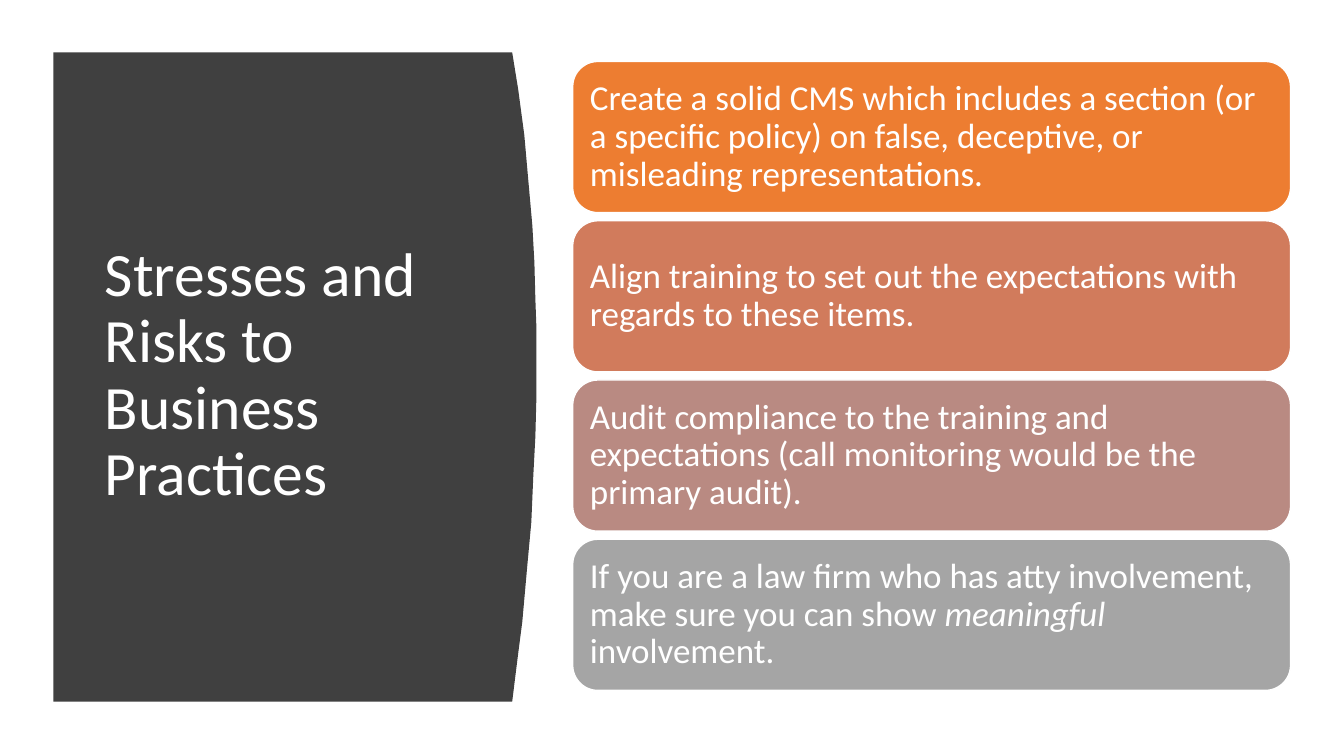
"""Build the slide on stresses and risks to business practices."""
import dataclasses

import pptx
import pptx.dml.color
import pptx.enum.shapes
import pptx.enum.text
import pptx.util

PX = 9144


@dataclasses.dataclass(frozen=True)
class Theme:
    """Colours, font and type sizes of the slide."""
    panel: str = "404040"
    white: str = "FFFFFF"
    cards: tuple = ("ED7D31", "D17B5C", "B98A82", "A5A5A5")
    font: str = "Calibri"
    title_size: int = 44
    card_size: int = 25


THEME = Theme()
TITLE = "Stresses and Risks to Business Practices"
CARDS = (
    (("Create a solid CMS which includes a section (or a specific policy) "
      "on false, deceptive, or misleading representations.", False),),
    (("Align training to set out the expectations with regards to these items.", False),),
    (("Audit compliance to the training and expectations "
      "(call monitoring would be the primary audit).", False),),
    (("If you are a law firm who has atty involvement, make sure you can show ", False),
     ("meaningful", True), (" involvement.", False)),
)
PANEL_POINTS = (
    (53, 52), (508, 52), (514, 89), (520, 134), (524, 179), (528, 224),
    (530, 260), (531, 297), (532, 325), (532, 394), (531, 433), (529, 471),
    (527, 518), (523, 561), (518, 617), (514, 648), (508, 696), (53, 696),
)
CARD_LEFT, CARD_TOP, CARD_WIDTH, CARD_HEIGHT, CARD_PITCH = 568, 61, 712, 150, 158


def px(n):
    """Turn px into EMU."""
    return pptx.util.Emu(n * PX)


def rgb(value):
    """Return a colour from its hex value."""
    return pptx.dml.color.RGBColor.from_string(value)


def fill_shape(sp, color):
    """Give a shape a flat fill without shadow."""
    sp.shadow.inherit = False
    sp.fill.solid()
    sp.fill.fore_color.rgb = rgb(color)


def format_text(tf, size):
    """Set white, left-aligned, vertically centred text."""
    tf.word_wrap = True
    tf.auto_size = pptx.enum.text.MSO_AUTO_SIZE.NONE
    tf.vertical_anchor = pptx.enum.text.MSO_ANCHOR.MIDDLE
    for p in tf.paragraphs:
        p.alignment = pptx.enum.text.PP_ALIGN.LEFT
        p.line_spacing = 0.9
        for r in p.runs:
            r.font.name = THEME.font
            r.font.size = pptx.util.Pt(size)
            r.font.color.rgb = rgb(THEME.white)


def add_panel(s):
    """Draw the dark panel with a curved right edge."""
    start, *rest = PANEL_POINTS
    builder = s.shapes.build_freeform(*start, scale=PX)
    builder.add_line_segments(rest, close=True)
    sp = builder.convert_to_shape()
    fill_shape(sp, THEME.panel)
    sp.line.fill.background()
    return sp


def set_title(s, panel):
    """Place the title in front of the panel."""
    sp = s.shapes.title
    sp.left, sp.top, sp.width, sp.height = map(px, (94, 111, 374, 524))
    sp.text_frame.text = TITLE
    format_text(sp.text_frame, THEME.title_size)
    panel._element.addnext(sp._element)


def add_card(s, top, color, parts):
    """Draw one rounded card holding plain and italic runs."""
    sp = s.shapes.add_shape(
        pptx.enum.shapes.MSO_SHAPE.ROUNDED_RECTANGLE,
        px(CARD_LEFT), px(top), px(CARD_WIDTH), px(CARD_HEIGHT))
    fill_shape(sp, color)
    sp.line.color.rgb = rgb(THEME.white)
    sp.line.width = pptx.util.Pt(1)
    tf = sp.text_frame
    tf.margin_left = tf.margin_right = tf.margin_top = tf.margin_bottom = px(10)
    for text, italic in parts:
        r = tf.paragraphs[0].add_run()
        r.text = text
        r.font.italic = italic
    format_text(tf, THEME.card_size)


def main():
    """Build and save the slide."""
    prs = pptx.Presentation()
    prs.slide_width, prs.slide_height = px(1333), px(750)
    s = prs.slides.add_slide(prs.slide_layouts[5])
    set_title(s, add_panel(s))
    for i, (color, parts) in enumerate(zip(THEME.cards, CARDS)):
        add_card(s, CARD_TOP + i * CARD_PITCH, color, parts)
    prs.save("out.pptx")


if __name__ == "__main__":
    main()
